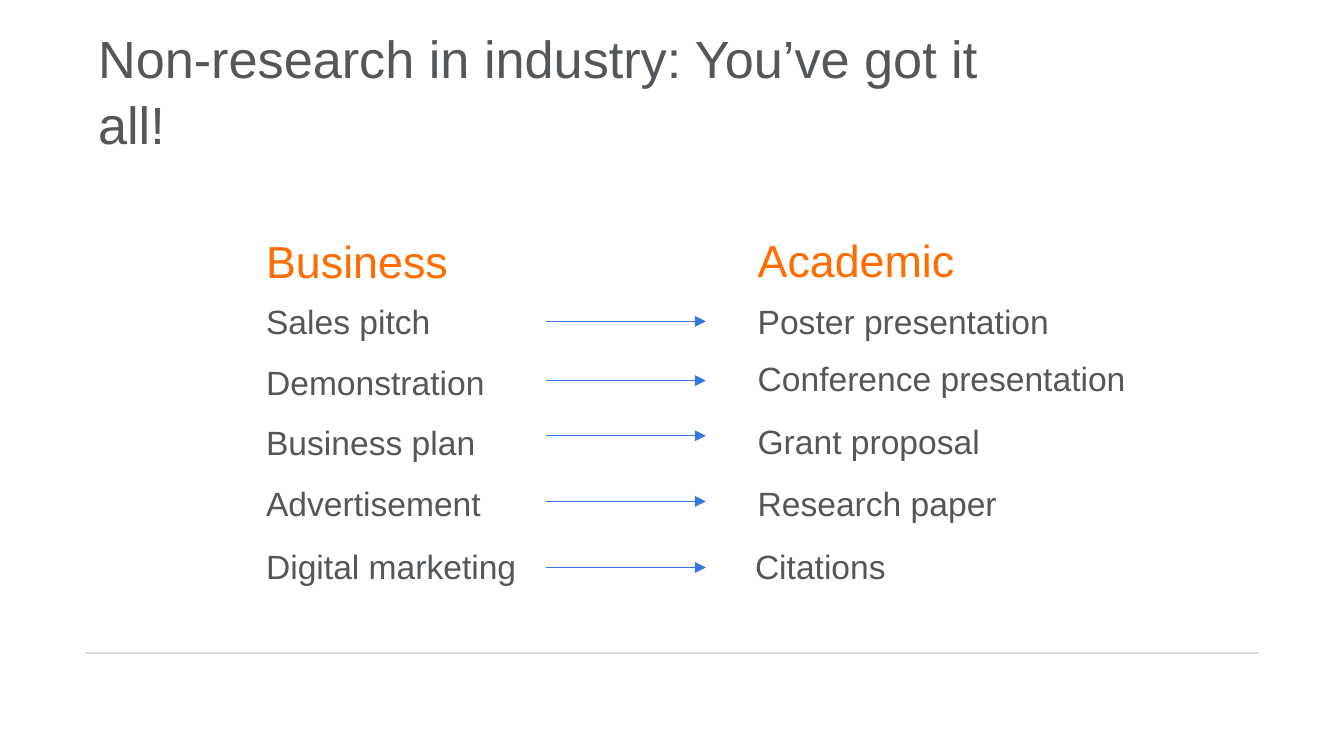
from dataclasses import dataclass

from lxml.etree import SubElement
from pptx import Presentation
from pptx.dml.color import RGBColor
from pptx.enum.shapes import MSO_CONNECTOR
from pptx.enum.text import MSO_ANCHOR, MSO_AUTO_SIZE, PP_ALIGN
from pptx.oxml.ns import qn
from pptx.shapes.connector import Connector
from pptx.slide import Slide
from pptx.util import Cm, Pt

FONT = "Arial"
GREY = RGBColor(0x53, 0x56, 0x5A)
ORANGE = RGBColor(0xFF, 0x6C, 0x00)
BLUE = RGBColor(0x36, 0x78, 0xDF)
RULE_GREY = RGBColor(0xDC, 0xDC, 0xDC)

# Column positions in centimetres
BUSINESS_LEFT = 4.78
ACADEMIC_LEFT = 14.07
ARROW_START, ARROW_END = 10.31, 13.34


@dataclass
class Pair:
    business: str
    academic: str
    business_top: float
    academic_top: float
    arrow_y: float
    academic_left: float = ACADEMIC_LEFT


PAIRS = [
    Pair("Sales pitch", "Poster presentation", 5.56, 5.56, 6.07),
    Pair("Demonstration", "Conference presentation", 6.71, 6.63, 7.19),
    Pair("Business plan", "Grant proposal", 7.85, 7.82, 8.23),
    Pair("Advertisement", "Research paper", 8.99, 8.99, 9.47),
    Pair("Digital marketing", "Citations", 10.19, 10.19, 10.72, 14.02),
]


def add_run(paragraph, text: str, size: float, color: RGBColor) -> None:
    run = paragraph.add_run()
    run.text = text
    run.font.name = FONT
    run.font.size = Pt(size)
    run.font.color.rgb = color


def add_label(slide: Slide, text: str, left: float, top: float, width: float,
              height: float = 1.02, size: float = 18,
              color: RGBColor = GREY) -> None:
    shape = slide.shapes.add_textbox(Cm(left), Cm(top), Cm(width), Cm(height))
    shape.text_frame.word_wrap = True
    add_run(shape.text_frame.paragraphs[0], text, size, color)


def add_line(slide: Slide, start: float, end: float, y: float,
             color: RGBColor, width: float) -> Connector:
    line = slide.shapes.add_connector(
        MSO_CONNECTOR.STRAIGHT, Cm(start), Cm(y), Cm(end), Cm(y))
    line.line.color.rgb = color
    line.line.width = Pt(width)
    SubElement(line._element.spPr, qn("a:effectLst"))
    return line


def add_arrow(slide: Slide, y: float) -> None:
    arrow = add_line(slide, ARROW_START, ARROW_END, y, BLUE, 0.5)
    SubElement(arrow.line._get_or_add_ln(), qn("a:tailEnd"), type="triangle")


def set_title(slide: Slide, text: str) -> None:
    title = slide.shapes.title
    title.left, title.top = Cm(1.6), Cm(1.04)
    title.width, title.height = Cm(17.91), Cm(1.3)
    frame = title.text_frame
    frame.auto_size = MSO_AUTO_SIZE.NONE
    frame.vertical_anchor = MSO_ANCHOR.MIDDLE
    frame.margin_top = frame.margin_bottom = 0
    paragraph = frame.paragraphs[0]
    paragraph.alignment = PP_ALIGN.LEFT
    paragraph.line_spacing = 1.05
    add_run(paragraph, text, 28, GREY)


def main() -> None:
    presentation = Presentation()
    presentation.slide_width, presentation.slide_height = Cm(25.4), Cm(14.28)
    slide = presentation.slides.add_slide(presentation.slide_layouts[5])

    # Footer rule and title
    add_line(slide, 1.6, 23.8, 12.34, RULE_GREY, 1)
    set_title(slide, "Non-research in industry: You’ve got it all!")

    # Column headings
    add_label(slide, "Business", BUSINESS_LEFT, 4.29, 6.53, 1.27, 24, ORANGE)
    add_label(slide, "Academic", ACADEMIC_LEFT, 4.27, 6.53, 1.27, 24, ORANGE)

    # Matching terms joined by arrows
    for pair in PAIRS:
        add_label(slide, pair.business, BUSINESS_LEFT, pair.business_top, 5.46)
        add_arrow(slide, pair.arrow_y)
        add_label(slide, pair.academic, pair.academic_left,
                  pair.academic_top, 8.43)

    presentation.save("out.pptx")


if __name__ == "__main__":
    main()
